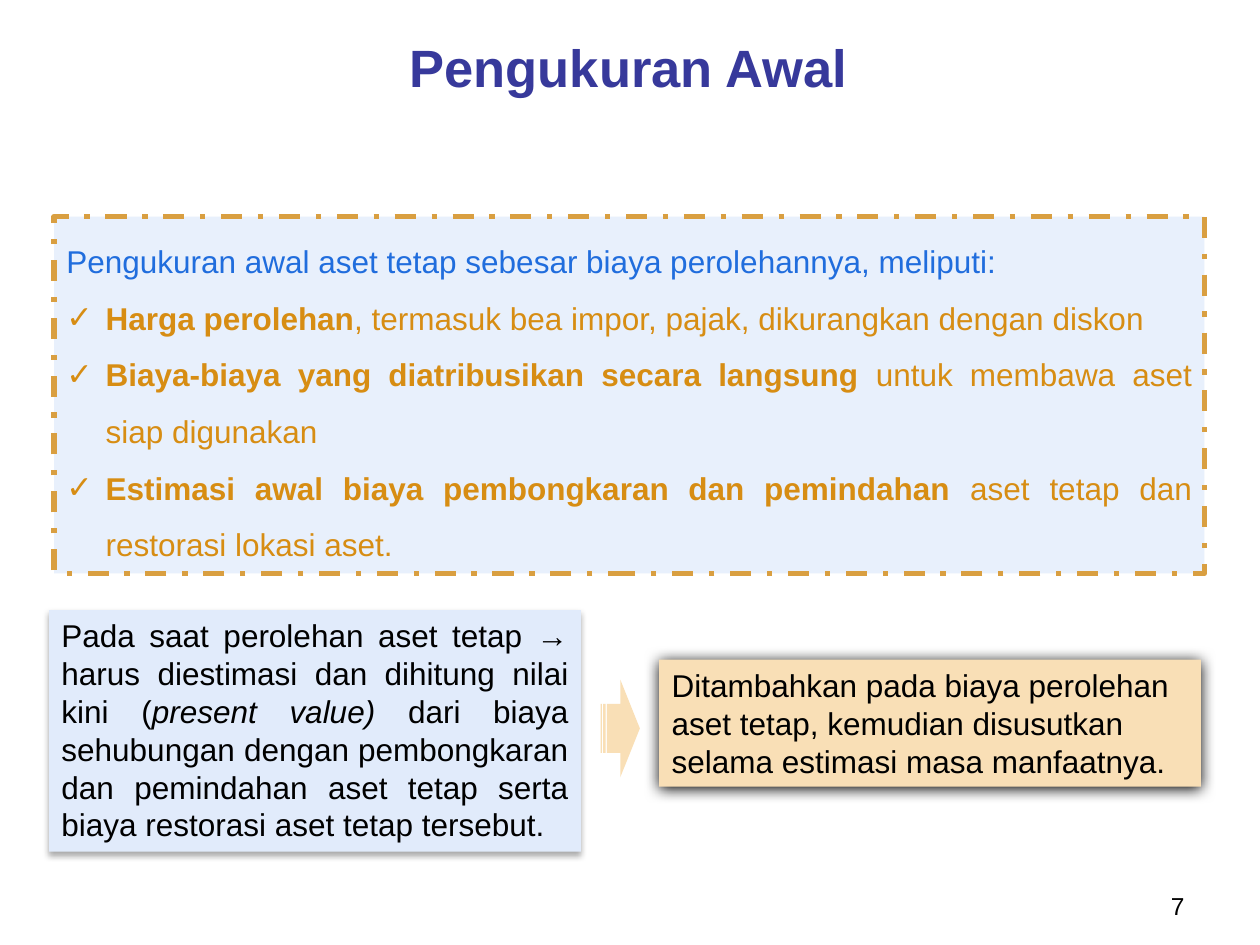
"""Build the slide on initial measurement of fixed assets."""
import pptx
import pptx.dml.color
import pptx.enum.dml
import pptx.enum.shapes
import pptx.enum.text
import pptx.oxml
import pptx.oxml.ns
import pptx.util

Cm, Pt = pptx.util.Cm, pptx.util.Pt
ALIGN = pptx.enum.text.PP_ALIGN
ANCHOR = pptx.enum.text.MSO_ANCHOR
SHAPE = pptx.enum.shapes.MSO_SHAPE

THEME = {
    "font": "Arial", "title_size": 30, "body_size": 18, "number_size": 14,
    "title": "37399B", "intro": "206DDD", "cost": "D78D13", "ink": "000000",
    "cost_fill": "E8F0FC", "border": "D99F41",
    "estimate_fill": "E1EBFB", "result_fill": "F9DFB6",
}
TITLE = "Pengukuran Awal"
PAGE_NUMBER = "7"
INTRO = "Pengukuran awal aset tetap sebesar biaya perolehannya, meliputi:"
COSTS = [
    ("Harga perolehan", ", termasuk bea impor, pajak, dikurangkan dengan diskon"),
    ("Biaya-biaya yang diatribusikan secara langsung ", "untuk membawa aset siap digunakan"),
    ("Estimasi awal biaya pembongkaran dan pemindahan", " aset tetap dan restorasi lokasi aset."),
]
ESTIMATE = [
    ("Pada saat perolehan aset tetap → harus diestimasi dan dihitung nilai kini (", False),
    ("present value) ", True),
    ("dari biaya sehubungan dengan pembongkaran dan pemindahan aset tetap "
     "serta biaya restorasi aset tetap tersebut.", False),
]
RESULT = ("Ditambahkan pada biaya perolehan aset tetap, "
          "kemudian disusutkan selama estimasi masa manfaatnya.")
PLACES = {
    "title": (1.24, 0.56, 22.86, 1.57),
    "number": (18.21, 17.83, 5.92, 0.89),
    "costs": (1.09, 4.37, 23.19, 7.19),
    "estimate": (0.99, 12.3, 10.72, 4.87),
    "result": (13.29, 13.3, 10.92, 2.56),
    "arrow": (12.11, 13.7, 0.79, 1.97),
}


def color(name):
    return pptx.dml.color.RGBColor.from_string(THEME[name])


def place(name):
    return [Cm(length) for length in PLACES[name]]


def add_span(para, text, ink="ink", size="body_size", bold=False, italic=False):
    span = para.add_run()
    span.text = text
    font = span.font
    font.name, font.size = THEME["font"], Pt(THEME[size])
    font.bold, font.italic = bold, italic
    font.color.rgb = color(ink)


def add_box(page, name, fill, shape=SHAPE.RECTANGLE):
    box = page.shapes.add_shape(shape, *place(name))
    box.fill.solid()
    box.fill.fore_color.rgb = color(fill)
    box.line.fill.background()
    box.shadow.inherit = False
    box.text_frame.word_wrap = True
    box.text_frame.vertical_anchor = ANCHOR.TOP
    box.text_frame.paragraphs[0].alignment = ALIGN.LEFT
    return box


def add_shadow(box, opacity, blur, distance):
    effects = box._element.spPr.find(pptx.oxml.ns.qn("a:effectLst"))
    effects.append(pptx.oxml.parse_xml(
        f'<a:outerShdw {pptx.oxml.ns.nsdecls("a")} blurRad="{Pt(blur)}" '
        f'dist="{Pt(distance)}" dir="5400000" algn="t" rotWithShape="0">'
        f'<a:srgbClr val="{THEME["ink"]}"><a:alpha val="{opacity * 1000}"/></a:srgbClr>'
        '</a:outerShdw>'))


def set_indent(para, indent, bullet=None):
    para.alignment = ALIGN.JUSTIFY
    para.line_spacing = 1.5
    properties = para._p.get_or_add_pPr()
    properties.set("marL", str(Cm(indent)))
    properties.set("indent", str(-Cm(indent)))
    if bullet:
        para.level = 1
        names = pptx.oxml.ns.nsdecls("a")
        for xml in (f'<a:buFont {names} typeface="{THEME["font"]}"/>',
                    f'<a:buChar {names} char="{bullet}"/>'):
            properties.append(pptx.oxml.parse_xml(xml))


def add_title(page):
    title = page.shapes.title
    title.left, title.top, title.width, title.height = place("title")
    title.text_frame.vertical_anchor = ANCHOR.MIDDLE
    para = title.text_frame.paragraphs[0]
    para.alignment = ALIGN.CENTER
    add_span(para, TITLE, "title", "title_size", bold=True)


def add_number(page):
    box = page.shapes.add_textbox(*place("number"))
    box.text_frame.word_wrap = True
    para = box.text_frame.paragraphs[0]
    para.alignment = ALIGN.RIGHT
    add_span(para, PAGE_NUMBER, size="number_size")


def add_costs(page):
    box = add_box(page, "costs", "cost_fill")
    box.line.color.rgb = color("border")
    box.line.width = Pt(3)
    box.line.dash_style = pptx.enum.dml.MSO_LINE.DASH_DOT
    para = box.text_frame.paragraphs[0]
    set_indent(para, 0.74)
    add_span(para, INTRO, "intro")
    for lead, rest in COSTS:
        para = box.text_frame.add_paragraph()
        set_indent(para, 0.79, "✓")
        add_span(para, lead, "cost", bold=True)
        add_span(para, rest, "cost")


def add_treatment(page):
    estimate = add_box(page, "estimate", "estimate_fill")
    add_shadow(estimate, 32, 3.5, 2.2)
    para = estimate.text_frame.paragraphs[0]
    para.alignment = ALIGN.JUSTIFY
    for text, italic in ESTIMATE:
        add_span(para, text, italic=italic)
    result = add_box(page, "result", "result_fill")
    add_shadow(result, 100, 8.5, 1)
    add_span(result.text_frame.paragraphs[0], RESULT)
    add_box(page, "arrow", "result_fill", SHAPE.STRIPED_RIGHT_ARROW)


def main():
    deck = pptx.Presentation()
    deck.slide_width, deck.slide_height = Cm(25.4), Cm(19.05)
    page = deck.slides.add_slide(deck.slide_layouts[5])
    add_title(page)
    add_number(page)
    add_costs(page)
    add_treatment(page)
    deck.save("out.pptx")


if __name__ == "__main__":
    main()
